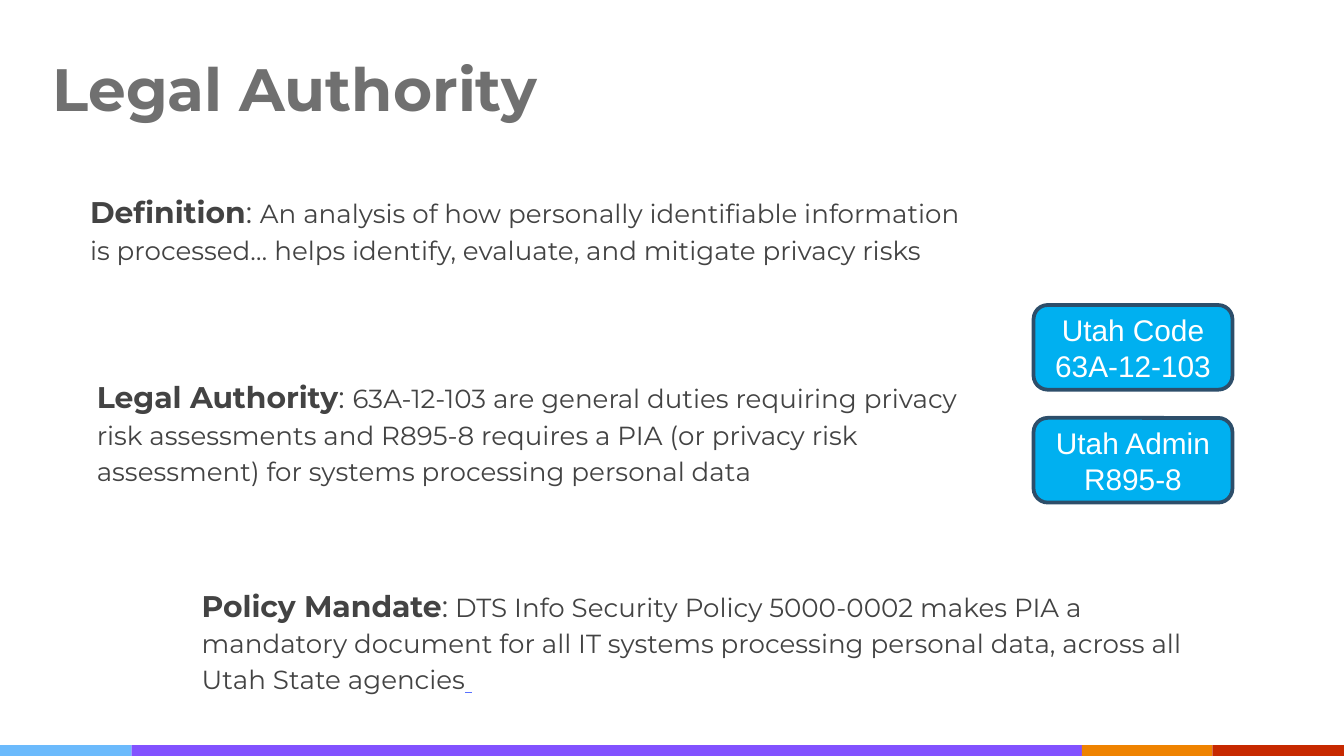
"""Build the Legal Authority slide with three statements and two citation badges."""

from dataclasses import dataclass
from itertools import accumulate

from lxml.etree import SubElement
from pptx import Presentation
from pptx.dml.color import RGBColor
from pptx.enum.shapes import MSO_SHAPE as Preset
from pptx.enum.text import MSO_ANCHOR as Anchor, MSO_AUTO_SIZE as AutoSize, PP_ALIGN as Align
from pptx.oxml.ns import qn
from pptx.util import Inches, Pt


@dataclass(frozen=True)
class Theme:
    font: str = "Montserrat"
    badge_font: str = "Arial"
    title: str = "707070"
    body: str = "434343"
    link: str = "5971FF"
    badge: str = "00B0F0"
    badge_line: str = "2D4E6A"
    badge_text: str = "FFFFFF"
    title_size: int = 32
    lead_size: int = 16
    body_size: int = 14


@dataclass(frozen=True)
class Area:
    left: float
    top: float
    width: float
    height: float


@dataclass(frozen=True)
class Statement:
    area: Area
    lead: str
    separator: str
    detail: str
    tail: str = ""


@dataclass(frozen=True)
class Stripe:
    width: float
    color: str


THEME = Theme()
PAGE_WIDTH = 10
PAGE_HEIGHT = PAGE_WIDTH * 9 / 16
STRIPE_HEIGHT = 0.08
TITLE_AREA = Area(0.29, 0.27, 6.26, 0.75)
FIRST_BADGE = Area(7.69, 2.27, 1.48, 0.63)
BADGE_STEP = 0.84
BADGES = ("Utah Code 63A-12-103", "Utah Admin R895-8")
STRIPES = (
    Stripe(0.98, "6BBAFC"),
    Stripe(7.07, "8252FF"),
    Stripe(0.97, "EF8300"),
    Stripe(0.98, "C72900"),
)
STATEMENTS = (
    Statement(
        Area(0.57, 1.3, 6.8, 1.07), "Definition", ": ",
        "An analysis of how personally identifiable information is processed… "
        "helps identify, evaluate, and mitigate privacy risks",
    ),
    Statement(
        Area(0.62, 2.68, 6.71, 1.07), "Legal Authority", ": ",
        "63A-12-103 are general duties requiring privacy risk assessments and R895-8 "
        "requires a PIA (or privacy risk assessment) for systems processing personal data",
    ),
    Statement(
        Area(1.4, 4.23, 7.77, 1.07), "Policy Mandate", ":",
        " DTS Info Security Policy 5000-0002 makes PIA a mandatory document for all IT "
        "systems processing personal data, across all Utah State agencies",
        " ",
    ),
)


def add_span(para, text: str, size: int, color: str, bold: bool = False,
             font: str = THEME.font, underline: bool = False) -> None:
    """Append one formatted run to a paragraph."""
    span = para.add_run()
    span.text = text
    span.font.name = font
    span.font.size = Pt(size)
    span.font.bold = bold
    span.font.underline = underline
    span.font.color.rgb = RGBColor.from_string(color)


def place(box, area: Area) -> None:
    """Move and size a shape."""
    box.left, box.top = Inches(area.left), Inches(area.top)
    box.width, box.height = Inches(area.width), Inches(area.height)


def prepare_frame(box, anchor, vertical_inset: float = 0.1):
    """Set the text frame of a shape and return its first paragraph."""
    frame = box.text_frame
    frame.word_wrap = True
    frame.auto_size = AutoSize.NONE
    frame.vertical_anchor = anchor
    frame.margin_left = frame.margin_right = Inches(0.1)
    frame.margin_top = frame.margin_bottom = Inches(vertical_inset)
    para = frame.paragraphs[0]
    para.space_before = Pt(0)
    return para


def add_block(page, preset, area: Area, color: str):
    """Add a filled shape without outline or shadow."""
    box = page.shapes.add_shape(preset, Inches(area.left), Inches(area.top),
                                Inches(area.width), Inches(area.height))
    box.shadow.inherit = False
    box.fill.solid()
    box.fill.fore_color.rgb = RGBColor.from_string(color)
    box.line.fill.background()
    return box


def draw_stripes(page) -> None:
    """Draw the coloured band along the bottom edge."""
    lefts = accumulate((stripe.width for stripe in STRIPES), initial=0)
    for left, stripe in zip(lefts, STRIPES):
        area = Area(left, PAGE_HEIGHT - STRIPE_HEIGHT, stripe.width, STRIPE_HEIGHT)
        add_block(page, Preset.RECTANGLE, area, stripe.color)


def draw_title(box, text: str) -> None:
    """Fill the title placeholder."""
    place(box, TITLE_AREA)
    para = prepare_frame(box, Anchor.BOTTOM)
    para.alignment = Align.LEFT
    add_span(para, text, THEME.title_size, THEME.title, bold=True)


def draw_statement(box, statement: Statement) -> None:
    """Fill a body placeholder with a bold lead and its detail."""
    place(box, statement.area)
    para = prepare_frame(box, Anchor.TOP)
    para.line_spacing = 1.15
    properties = para._p.get_or_add_pPr()
    properties.set("marL", "0")
    properties.set("indent", "0")
    SubElement(properties, qn("a:buNone"))
    add_span(para, statement.lead, THEME.lead_size, THEME.body, bold=True)
    add_span(para, statement.separator, THEME.lead_size, THEME.body)
    add_span(para, statement.detail, THEME.body_size, THEME.body)
    if statement.tail:
        add_span(para, statement.tail, THEME.body_size, THEME.link, underline=True)


def draw_badge(page, text: str, area: Area) -> None:
    """Draw a rounded citation badge."""
    box = add_block(page, Preset.ROUNDED_RECTANGLE, area, THEME.badge)
    box.line.color.rgb = RGBColor.from_string(THEME.badge_line)
    box.line.width = Pt(2)
    para = prepare_frame(box, Anchor.MIDDLE, 0.05)
    para.alignment = Align.CENTER
    add_span(para, text, THEME.lead_size, THEME.badge_text, font=THEME.badge_font)


def main() -> None:
    """Build and save the deck."""
    deck = Presentation()
    deck.slide_width, deck.slide_height = Inches(PAGE_WIDTH), Inches(PAGE_HEIGHT)
    page = deck.slides.add_slide(deck.slide_layouts.get_by_name("Comparison"))
    title, *bodies = page.placeholders
    draw_stripes(page)
    draw_title(title, "Legal Authority")
    for index, text in enumerate(BADGES):
        top = FIRST_BADGE.top + index * BADGE_STEP
        draw_badge(page, text, Area(FIRST_BADGE.left, top, FIRST_BADGE.width, FIRST_BADGE.height))
    for box, statement in zip(bodies, STATEMENTS):
        draw_statement(box, statement)
    for spare in bodies[len(STATEMENTS):]:
        spare.element.getparent().remove(spare.element)
    deck.save("out.pptx")


if __name__ == "__main__":
    main()
